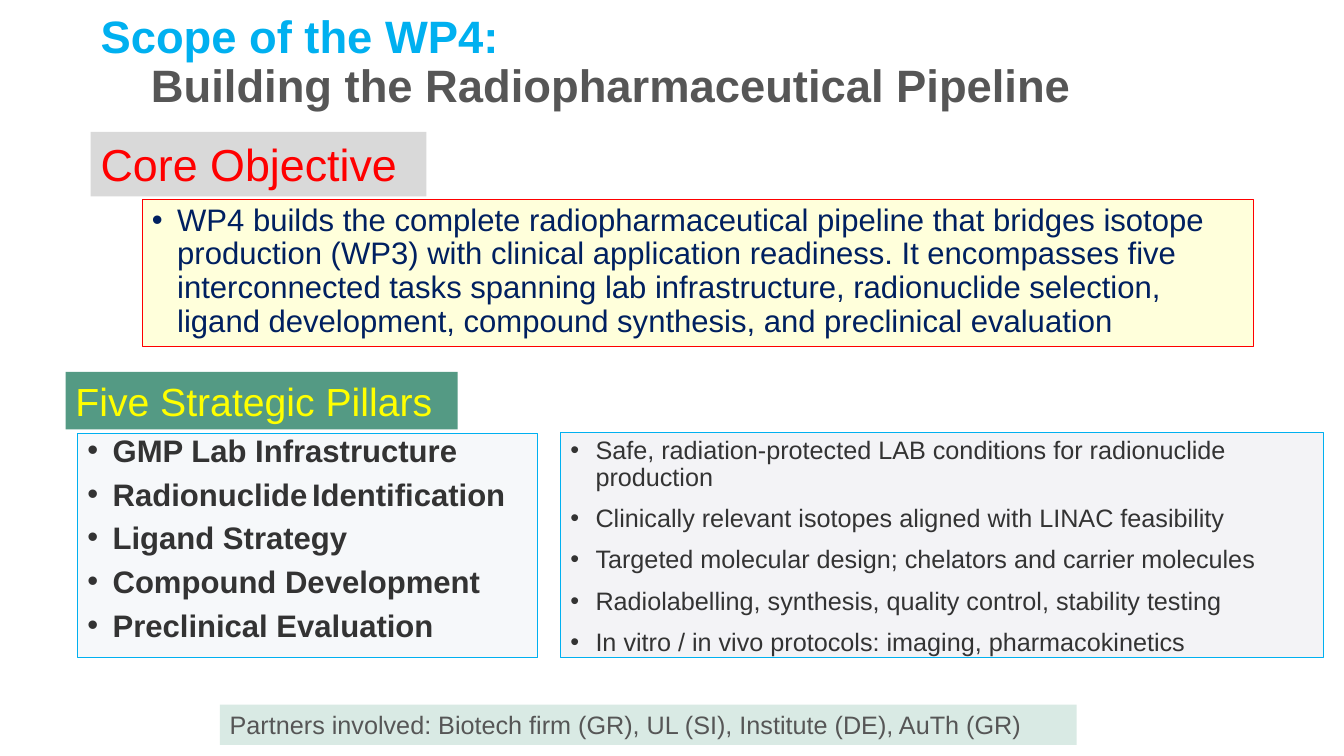
import copy
from dataclasses import dataclass

import lxml.etree
import pptx
import pptx.dml.color
import pptx.enum.shapes
import pptx.enum.text
import pptx.oxml.ns
import pptx.util

Pt = pptx.util.Pt
qn = pptx.oxml.ns.qn


@dataclass(frozen=True)
class Theme:
    font: str = "Arial"
    sky: str = "00B0F0"
    gray: str = "565656"
    ink: str = "333333"
    navy: str = "002060"
    red: str = "FF0000"
    yellow: str = "FFFF00"
    green: str = "549A84"
    mint: str = "D9EAE4"
    silver: str = "D9D9D9"
    mist: str = "D9E2ED"
    lilac: str = "E9E8EF"
    title_size: float = 32.4
    heading_size: float = 32
    subheading_size: float = 28
    body_size: float = 22.2
    detail_size: float = 18
    gap_size: float = 11.1


def rgb(value):
    return pptx.dml.color.RGBColor.from_string(value)


def add_text(paragraph, text, *, font, size, color, bold=False):
    for index, line in enumerate(text.split("\n")):
        if index:
            paragraph.add_line_break()
            line_break = paragraph._p.findall(qn("a:br"))[-1]
            line_break.insert(0, copy.deepcopy(run._r.rPr))
        if line:
            run = paragraph.add_run()
            run.text = line
            run.font.name = font
            run.font.size = Pt(size)
            run.font.bold = bold
            run.font.color.rgb = rgb(color)


class SlideBuilder:
    def __init__(self, slide, theme):
        self.slide = slide
        self.theme = theme

    def title(self, bounds, parts):
        shape = self.slide.shapes.add_textbox(*map(Pt, bounds))
        frame = shape.text_frame
        frame.word_wrap = True
        frame.vertical_anchor = pptx.enum.text.MSO_ANCHOR.MIDDLE
        paragraph = frame.paragraphs[0]
        paragraph.line_spacing = 0.9
        for text, color in parts:
            add_text(paragraph, text, font=self.theme.font,
                     size=self.theme.title_size, color=color, bold=True)
        end = lxml.etree.SubElement(paragraph._p, qn("a:endParaRPr"))
        end.set("sz", str(round(self.theme.title_size * 100)))

    def box(self, bounds, fill, alpha=None, line=None):
        shape = self.slide.shapes.add_shape(
            pptx.enum.shapes.MSO_SHAPE.RECTANGLE, *map(Pt, bounds))
        shape.shadow.inherit = False
        shape.fill.solid()
        shape.fill.fore_color.rgb = rgb(fill)
        if alpha is not None:
            color = shape.fill._xPr.find(".//" + qn("a:srgbClr"))
            lxml.etree.SubElement(color, qn("a:alpha")).set("val", str(alpha * 1000))
        if line:
            shape.line.color.rgb = rgb(line)
            shape.line.width = Pt(0.75)
        else:
            shape.line.fill.background()
        shape.text_frame.word_wrap = True
        shape.text_frame.vertical_anchor = pptx.enum.text.MSO_ANCHOR.TOP
        return shape

    def label(self, bounds, text, fill, size, color):
        frame = self.box(bounds, fill).text_frame
        frame.auto_size = pptx.enum.text.MSO_AUTO_SIZE.SHAPE_TO_FIT_TEXT
        paragraph = frame.paragraphs[0]
        paragraph.alignment = pptx.enum.text.PP_ALIGN.LEFT
        add_text(paragraph, text, font=self.theme.font, size=size, color=color)

    def bullet_box(self, bounds, items, fill, alpha, line, size, color,
                   bold=False, spacing=0.9):
        frame = self.box(bounds, fill, alpha, line).text_frame
        for index, item in enumerate(items):
            paragraph = frame.add_paragraph() if index else frame.paragraphs[0]
            paragraph.alignment = pptx.enum.text.PP_ALIGN.LEFT
            paragraph.line_spacing = spacing
            paragraph.space_before = Pt(10 if index else 0)
            properties = paragraph._p.get_or_add_pPr()
            properties.set("marL", str(Pt(18)))
            properties.set("indent", str(-Pt(18)))
            bullet_font = lxml.etree.SubElement(properties, qn("a:buFont"))
            bullet_font.set("typeface", self.theme.font)
            lxml.etree.SubElement(properties, qn("a:buChar")).set("char", "•")
            runs = [(item, size)] if isinstance(item, str) else item
            for text, run_size in runs:
                add_text(paragraph, text, font=self.theme.font, size=run_size,
                         color=color, bold=bold)


def main():
    theme = Theme()
    presentation = pptx.Presentation()
    presentation.slide_width = Pt(960)
    presentation.slide_height = Pt(540)
    slide = presentation.slides.add_slide(presentation.slide_layouts[6])
    builder = SlideBuilder(slide, theme)

    builder.bullet_box(
        (101.5, 142.5, 794.2, 105.1),
        ["WP4 builds the complete radiopharmaceutical pipeline that bridges "
         "isotope production (WP3) with clinical application readiness. It "
         "encompasses five interconnected tasks spanning lab infrastructure, "
         "radionuclide selection, ligand development, compound synthesis, and "
         "preclinical evaluation"],
        theme.yellow, 14, theme.red, theme.body_size, theme.navy)
    builder.title(
        (64.8, 28.8, 753.8, 71.3),
        [("Scope of the WP4: \n\t", theme.sky),
         ("Building the Radiopharmaceutical Pipeline\n", theme.gray)])
    builder.bullet_box(
        (55.4, 309.6, 328.3, 159.8),
        ["GMP Lab Infrastructure",
         [("Radionuclide", theme.body_size), (" ", theme.gap_size),
          ("Identification", theme.body_size)],
         "Ligand Strategy",
         "Compound Development",
         "Preclinical Evaluation"],
        theme.mist, 23, theme.sky, theme.body_size, theme.ink,
        bold=True, spacing=0.8)
    builder.bullet_box(
        (400.3, 308.9, 545, 160.6),
        ["Safe, radiation-protected LAB conditions for radionuclide production",
         "Clinically relevant isotopes aligned with LINAC feasibility",
         "Targeted molecular design; chelators and carrier molecules",
         "Radiolabelling, synthesis, quality control, stability testing",
         "In vitro / in vivo protocols: imaging, pharmacokinetics"],
        theme.lilac, 52, theme.sky, theme.detail_size, theme.ink)
    builder.label((46.8, 265.7, 280.1, 41), "Five Strategic Pillars",
                  theme.green, theme.subheading_size, theme.yellow)
    builder.label((64.8, 94.3, 239.8, 46.1), "Core Objective",
                  theme.silver, theme.heading_size, theme.red)
    builder.label((157, 503.3, 612, 28.8),
                  "Partners involved: Biotech firm (GR), UL (SI), Institute (DE), AuTh (GR)",
                  theme.mint, theme.detail_size, theme.gray)
    presentation.save("out.pptx")


if __name__ == "__main__":
    main()
